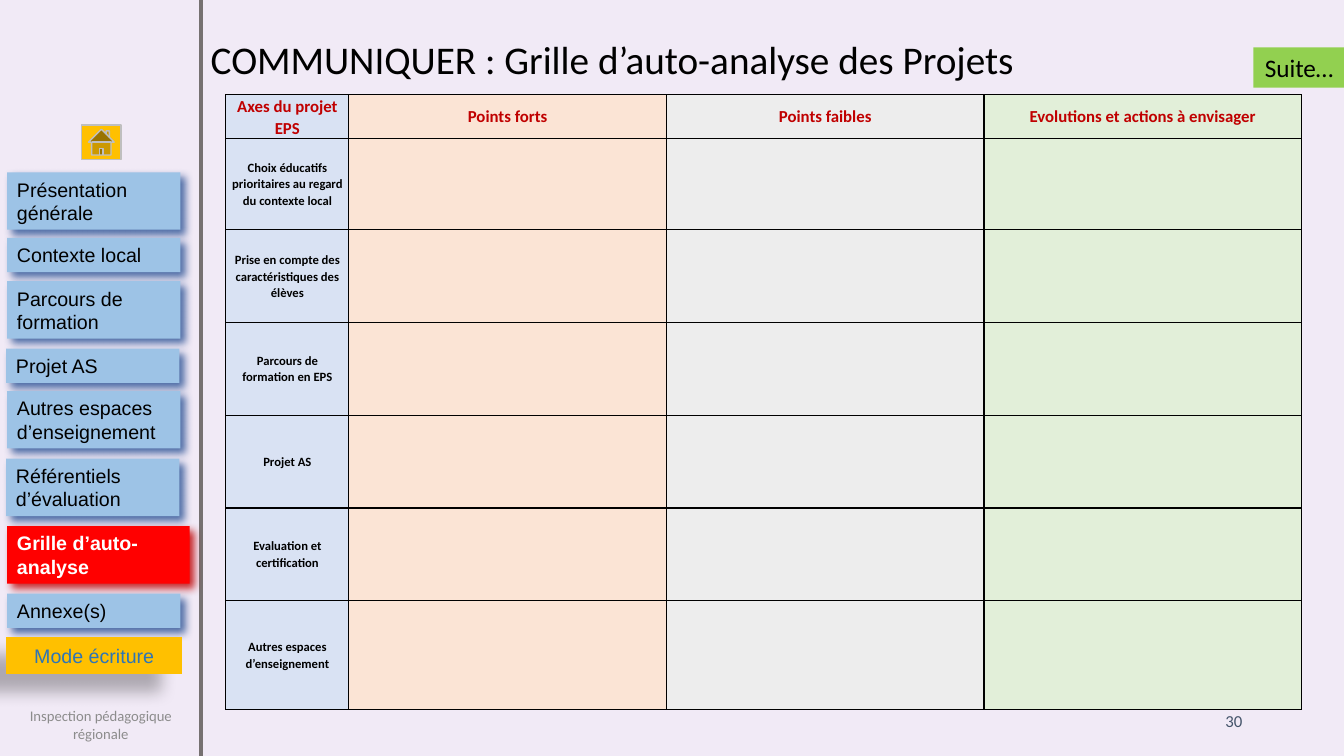
from dataclasses import dataclass

from lxml.etree import SubElement as Sub
from pptx import Presentation
from pptx.dml.color import RGBColor as Rgb
from pptx.enum.shapes import MSO_CONNECTOR as Conn, MSO_SHAPE as Kind
from pptx.enum.text import MSO_ANCHOR as Anchor, MSO_AUTO_SIZE as Auto, PP_ALIGN as Align
from pptx.oxml.ns import qn
from pptx.util import Pt

SCALE = 9144  # 100 px to the inch


def px(n):
    return n * SCALE


@dataclass(frozen=True)
class Theme:
    sans: str = "Calibri"
    menu: str = "Arial"
    back: str = "F1EAF6"
    ink: str = "000000"
    white: str = "FFFFFF"
    red: str = "FF0000"
    dark: str = "C00000"
    sky: str = "9DC3E6"
    navy: str = "2F5597"
    blue: str = "2E75B6"
    gold: str = "FFC000"
    lime: str = "92D050"
    rule: str = "767171"
    edge: str = "BFBFBF"
    foot: str = "8C8C8C"
    slate: str = "44546A"
    cols: tuple = ("D9E2F3", "FBE4D5", "EDEDED", "E2EFD9")
    big: float = 28
    mid: float = 18
    item: float = 14
    head: float = 12
    small: float = 10.5
    tiny: float = 9


class Deck:
    def __init__(self, theme):
        self.t = theme
        self.prs = Presentation()
        self.prs.slide_width, self.prs.slide_height = px(1333), px(750)
        self.slide = self.prs.slides.add_slide(self.prs.slide_layouts[5])
        fill = self.slide.background.fill
        fill.solid()
        fill.fore_color.rgb = Rgb.from_string(theme.back)

    def label(self, frame, text, size, color, face=None, bold=False, align=Align.LEFT):
        frame.word_wrap = True
        frame.text = text
        par = frame.paragraphs[0]
        par.alignment = align
        font = par.font
        font.name, font.size, font.bold = face or self.t.sans, Pt(size), bold
        font.color.rgb = Rgb.from_string(color)
        return par

    def title(self, box, text):
        shape = self.slide.shapes.title
        shape.left, shape.top, shape.width, shape.height = map(px, box)
        frame = shape.text_frame
        self.label(frame, text, self.t.big, self.t.ink)
        frame.vertical_anchor = Anchor.TOP
        frame.auto_size = Auto.SHAPE_TO_FIT_TEXT

    def shape(self, box, fill, kind=Kind.RECTANGLE, line=None, shade=None):
        shape = self.slide.shapes.add_shape(kind, *map(px, box))
        shape.shadow.inherit = False
        shape.fill.solid()
        shape.fill.fore_color.rgb = Rgb.from_string(fill)
        if line:
            shape.line.color.rgb = Rgb.from_string(line)
            shape.line.width = Pt(1)
        else:
            shape.line.fill.background()
        if shade:
            color, alpha, blur, dist, angle = shade
            fx = shape._element.spPr.find(qn("a:effectLst"))
            drop = Sub(fx, qn("a:outerShdw"), blurRad=str(Pt(blur)), dist=str(Pt(dist)),
                       dir=str(angle * 60000), algn="tl", rotWithShape="0")
            tint = Sub(drop, qn("a:srgbClr"), val=color)
            Sub(tint, qn("a:alpha"), val=str(alpha * 1000))
        return shape

    def entry(self, box, text, live=False):
        t = self.t
        shade = (t.dark if live else t.navy, 84, 6, 5, 45)
        frame = self.shape(box, t.red if live else t.sky, shade=shade).text_frame
        self.label(frame, text, t.item, t.white if live else t.ink, t.menu, live)
        frame.vertical_anchor = Anchor.MIDDLE
        frame.auto_size = Auto.SHAPE_TO_FIT_TEXT

    def note(self, box, text, size, color, align):
        frame = self.slide.shapes.add_textbox(*map(px, box)).text_frame
        self.label(frame, text, size, color, align=align)
        frame.vertical_anchor = Anchor.MIDDLE

    def rule(self, x, top, end, color, width):
        line = self.slide.shapes.add_connector(Conn.STRAIGHT, px(x), px(top), px(x), px(end))
        line.line.color.rgb = Rgb.from_string(color)
        line.line.width = Pt(width)
        Sub(line._element.spPr, qn("a:effectLst"))

    def cell(self, cell, fill):
        props = cell._tc.get_or_add_tcPr()
        for side in "LRTB":
            edge = Sub(props, qn(f"a:ln{side}"), w=str(Pt(1)))
            Sub(Sub(edge, qn("a:solidFill")), qn("a:srgbClr"), val=self.t.ink)
        cell.fill.solid()
        cell.fill.fore_color.rgb = Rgb.from_string(fill)
        cell.vertical_anchor = Anchor.MIDDLE
        cell.margin_left = cell.margin_right = px(6)
        cell.margin_top = cell.margin_bottom = 0

    def grid(self, left, top, wide, high, heads, axes):
        t = self.t
        table = self.slide.shapes.add_table(len(high), len(wide), px(left), px(top),
                                            px(sum(wide)), px(sum(high))).table
        table.first_row = table.horz_banding = False
        for col, width in zip(table.columns, wide):
            col.width = px(width)
        for row, height in zip(table.rows, high):
            row.height = px(height)
        for r in range(len(high)):
            for c, fill in enumerate(t.cols):
                cell = table.cell(r, c)
                self.cell(cell, fill)
                if r and c:
                    continue
                text, size, color = ((axes[r - 1], t.tiny, t.ink) if r
                                     else (heads[c], t.head, t.dark))
                par = self.label(cell.text_frame, text, size, color,
                                 bold=True, align=Align.CENTER)
                par.line_spacing = 1.07


MENU = [  # left, top, width, lines, label
    (7, 171, 172, 2, "Présentation générale"),
    (7, 236, 172, 1, "Contexte local"),
    (7, 279, 172, 2, "Parcours de formation"),
    (6, 346, 172, 1, "Projet AS"),
    (7, 388, 172, 2, "Autres espaces d’enseignement"),
    (6, 455, 172, 2, "Référentiels d’évaluation"),
    (7, 522, 181, 2, "Grille d’auto-analyse"),
    (7, 589, 172, 1, "Annexe(s)"),
]
HEADS = ["Axes du projet EPS", "Points forts", "Points faibles",
         "Evolutions et actions à envisager"]
AXES = [
    "Choix éducatifs prioritaires au regard du contexte local",
    "Prise en compte des caractéristiques des élèves",
    "Parcours de formation en EPS",
    "Projet AS",
    "Evaluation et certification",
    "Autres espaces d’enseignement",
]


def main():
    t = Theme()
    deck = Deck(t)

    # Title and side rule
    deck.title((199, 30, 1092, 57), "COMMUNIQUER : Grille d’auto-analyse des Projets")
    deck.rule(199, 0, 750, t.rule, 3)

    # Side menu
    deck.shape((81, 124, 39, 34), t.gold, Kind.ACTION_BUTTON_HOME, line=t.edge)
    for left, top, width, lines, text in MENU:
        box = (left, top, width, 57 if lines == 2 else 34)
        deck.entry(box, text, live=text.startswith("Grille"))
    mode = deck.shape((6, 632, 175, 37), t.gold, Kind.ACTION_BUTTON_CUSTOM,
                      shade=(t.ink, 28, 11.8, 19.7, 141)).text_frame
    deck.label(mode, "Mode écriture", t.item, t.blue, t.menu, align=Align.CENTER)
    mode.vertical_anchor = Anchor.MIDDLE

    # Tag at top right
    tag = deck.shape((1243, 47, 91, 40), t.lime).text_frame
    deck.label(tag, "Suite…", t.mid, t.ink, align=Align.CENTER)
    tag.word_wrap = False
    tag.vertical_anchor = Anchor.TOP
    tag.auto_size = Auto.SHAPE_TO_FIT_TEXT

    # Footer and page number
    deck.note((14, 702, 172, 34), "Inspection pédagogique régionale",
              t.small, t.foot, Align.CENTER)
    deck.note((1194, 695, 48, 40), "30", t.head, t.slate, Align.RIGHT)

    # Analysis grid
    deck.grid(224, 94, [122] + [315] * 3, [43, 91] + [92] * 4 + [108], HEADS, AXES)

    deck.prs.save("out.pptx")


if __name__ == "__main__":
    main()
